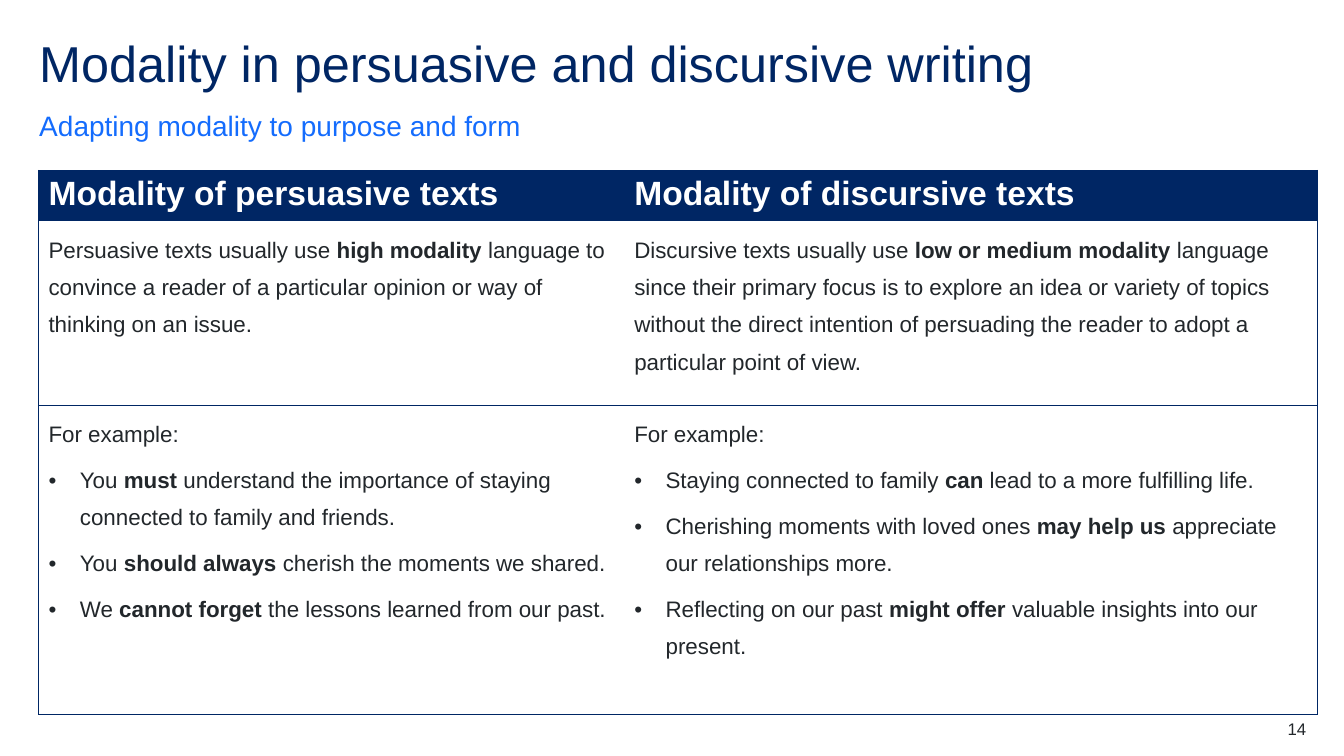
"""Build the slide on modality in persuasive and discursive writing."""
from dataclasses import dataclass

from lxml import etree
from pptx import Presentation
from pptx.dml.color import RGBColor
from pptx.enum.text import MSO_ANCHOR, PP_ALIGN
from pptx.oxml.ns import qn
from pptx.util import Cm, Pt

NAVY = RGBColor(0x00, 0x26, 0x64)
BLUE = RGBColor(0x14, 0x6C, 0xFD)
INK = RGBColor(0x22, 0x27, 0x2B)
WHITE = RGBColor(0xFF, 0xFF, 0xFF)
LEFT, RIGHT = PP_ALIGN.LEFT, PP_ALIGN.RIGHT
TOP, BOTTOM = MSO_ANCHOR.TOP, MSO_ANCHOR.BOTTOM
FONT = "Arial"
COL_WIDTHS = (14.76, 17.48)
ROW_HEIGHTS = (1.09, 4.65, 7.8)
INDENT = Cm(0.79)


@dataclass
class Label:
    text: str
    left: float
    top: float
    width: float
    height: float
    size: int
    color: RGBColor
    spacing: float = 1.0
    after: int = 0
    align: PP_ALIGN = LEFT
    anchor: MSO_ANCHOR = TOP


@dataclass
class Column:
    heading: str
    usage: str
    examples: tuple[str, ...]


LABELS = (
    Label("Modality in persuasive and discursive writing", 0.99, 0.99, 31.9, 1.52,
          36, NAVY, spacing=0.9),
    Label("Adapting modality to purpose and form", 0.99, 2.72, 31.9, 0.86,
          20, BLUE, spacing=1.5, after=12, anchor=BOTTOM),
    Label("14", 30.91, 18.11, 2.01, 0.51, 12, INK, align=RIGHT),
)

COLUMNS = (
    Column(
        "Modality of persuasive texts",
        "Persuasive texts usually use *high modality *language to convince a reader "
        "of a particular opinion or way of thinking on an issue.",
        ("You *must* understand the importance of staying connected to family and friends.",
         "You *should always *cherish the moments we shared.",
         "We *cannot forget *the lessons learned from our past."),
    ),
    Column(
        "Modality of discursive texts",
        "Discursive texts usually use *low or medium modality *language since their "
        "primary focus is to explore an idea or variety of topics without the direct "
        "intention of persuading the reader to adopt a particular point of view.",
        ("Staying connected to family *can* lead to a more fulfilling life.",
         "Cherishing moments with loved ones *may help us *appreciate our relationships more.",
         "Reflecting on our past *might offer *valuable insights into our present."),
    ),
)


def write(p, text: str, *, size: int, color: RGBColor, bold: bool = False,
          spacing: float = 1.0, after: int = 0, align: PP_ALIGN = LEFT,
          bullet: bool = False) -> None:
    """Fill a paragraph, switching bold at each asterisk."""
    p.alignment, p.line_spacing, p.space_after = align, spacing, Pt(after)
    for i, part in enumerate(text.split("*")):
        r = p.add_run()
        r.text = part
        r.font.name, r.font.size = FONT, Pt(size)
        r.font.bold = bold or i % 2 == 1
        r.font.color.rgb = color
    if bullet:
        pPr = p._p.get_or_add_pPr()
        pPr.set("marL", str(INDENT))
        pPr.set("indent", str(-INDENT))
        etree.SubElement(pPr, qn("a:buFont")).set("typeface", FONT)
        etree.SubElement(pPr, qn("a:buChar")).set("char", "•")


def add_label(s, label: Label) -> None:
    """Place a text box without margins."""
    sp = s.shapes.add_textbox(Cm(label.left), Cm(label.top),
                              Cm(label.width), Cm(label.height))
    tf = sp.text_frame
    tf.word_wrap, tf.vertical_anchor = True, label.anchor
    tf.margin_left = tf.margin_right = tf.margin_top = tf.margin_bottom = 0
    write(tf.paragraphs[0], label.text, size=label.size, color=label.color,
          spacing=label.spacing, after=label.after, align=label.align)


def set_borders(cell, visible: str) -> None:
    """Draw the visible sides of a cell and clear the others."""
    tcPr = cell._tc.get_or_add_tcPr()
    for i, side in enumerate("LRTB"):
        ln = etree.Element(qn(f"a:ln{side}"), w=str(Pt(0.5)))
        if side in visible:
            fill = etree.SubElement(ln, qn("a:solidFill"))
            etree.SubElement(fill, qn("a:srgbClr")).set("val", str(NAVY))
        else:
            etree.SubElement(ln, qn("a:noFill"))
        tcPr.insert(i, ln)


def add_column(table, c: int, column: Column) -> None:
    """Fill the heading, usage and example cells of one column."""
    body = {"size": 16, "color": INK, "spacing": 1.5, "after": 6}
    heading, usage, examples = (table.cell(row, c) for row in range(len(ROW_HEIGHTS)))
    for cell in (heading, usage, examples):
        cell.fill.background()
        set_borders(cell, "LR"[c] + "TB")
    heading.fill.solid()
    heading.fill.fore_color.rgb = NAVY
    write(heading.text_frame.paragraphs[0], column.heading,
          size=24, color=WHITE, bold=True)
    write(usage.text_frame.paragraphs[0], column.usage, **body)
    tf = examples.text_frame
    write(tf.paragraphs[0], "For example:", **body)
    for example in column.examples:
        write(tf.add_paragraph(), example, bullet=True, **body)


def add_comparison(s) -> None:
    """Add the table comparing both text types."""
    table = s.shapes.add_table(len(ROW_HEIGHTS), len(COLUMNS), Cm(0.97), Cm(4.29),
                               Cm(sum(COL_WIDTHS)), Cm(sum(ROW_HEIGHTS))).table
    table.horz_banding = False
    for row, height in zip(table.rows, ROW_HEIGHTS):
        row.height = Cm(height)
    for c, column in enumerate(COLUMNS):
        table.columns[c].width = Cm(COL_WIDTHS[c])
        add_column(table, c, column)


def main() -> None:
    """Create and save the presentation."""
    prs = Presentation()
    prs.slide_width, prs.slide_height = Cm(33.87), Cm(19.05)
    s = prs.slides.add_slide(prs.slide_layouts[6])
    for label in LABELS:
        add_label(s, label)
    add_comparison(s)
    prs.save("out.pptx")


if __name__ == "__main__":
    main()
